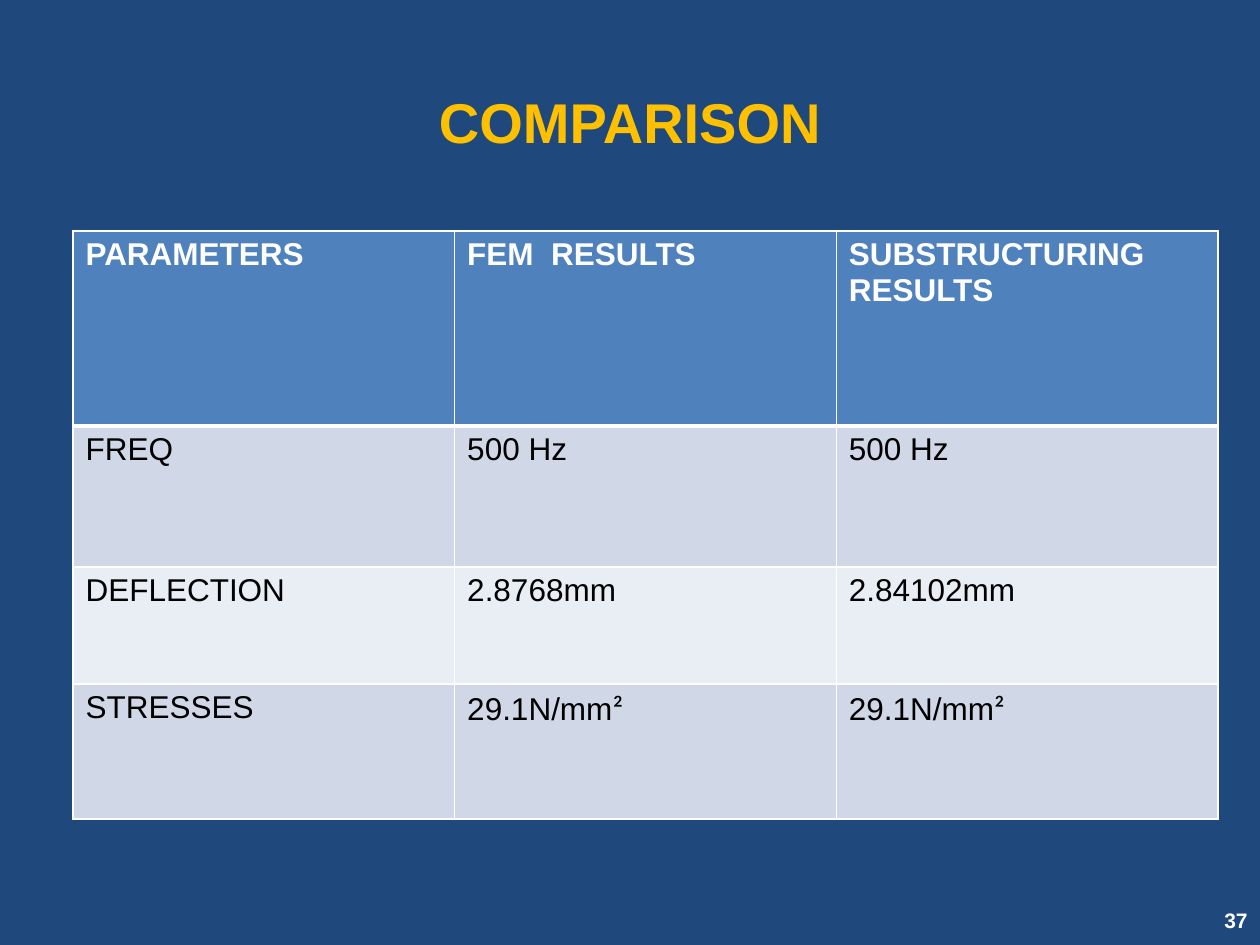
from lxml.etree import SubElement
from pptx import Presentation
from pptx.dml.color import RGBColor
from pptx.enum.text import MSO_ANCHOR, PP_ALIGN
from pptx.oxml.ns import qn
from pptx.util import Pt

EMU = 914400 / 126
HEX = {"back": "1F497D", "gold": "FFC000", "head": "4F81BD", "white": "FFFFFF",
       "black": "000000", "odd": "D0D8E8", "even": "E9EDF4"}
ROWS = [
    ["PARAMETERS", "FEM  RESULTS", "SUBSTRUCTURING RESULTS"],
    ["FREQ", "500 Hz", "500 Hz"],
    ["DEFLECTION", "2.8768mm", "2.84102mm"],
    ["STRESSES", "29.1N/mm²", "29.1N/mm²"],
]
HEIGHTS = [195, 141, 117, 135]


def px(n):
    return round(n * EMU)


def tint(name):
    return RGBColor.from_string(HEX[name])


def add_run(para, text, size, color, bold, face="Arial"):
    run = para.add_run()
    run.text = text
    font = run.font
    font.name, font.size, font.bold = face, Pt(size), bold
    font.color.rgb = tint(color)


def add_label(slide, box, text, size, color, align):
    frame = slide.shapes.add_textbox(*map(px, box)).text_frame
    frame.word_wrap = True
    frame.vertical_anchor = MSO_ANCHOR.MIDDLE
    para = frame.paragraphs[0]
    para.alignment = align
    add_run(para, text, size, color, True)


def add_edge(cell, side, width):
    line = SubElement(cell._tc.get_or_add_tcPr(), qn(f"a:ln{side}"), w=str(Pt(width)))
    fill = SubElement(line, qn("a:solidFill"))
    SubElement(fill, qn("a:srgbClr"), val=HEX["white"])


def fill_cell(cell, text, row):
    """Set edges, fill and text; a thick rule parts the head row from the body."""
    widths = {"L": 1, "R": 1, "T": 3 if row == 1 else 1, "B": 3 if row == 0 else 1}
    for side, width in widths.items():
        add_edge(cell, side, width)
    cell.fill.solid()
    head = row == 0
    cell.fill.fore_color.rgb = tint("head" if head else "odd" if row % 2 else "even")
    para = cell.text_frame.paragraphs[0]
    color = "white" if head else "black"
    base, power, _ = text.partition("²")
    add_run(para, base, 18, color, head)
    if power:
        add_run(para, power, 18, color, head, "Calibri")


def add_grid(slide, box, rows, heights):
    count = len(rows[0])
    table = slide.shapes.add_table(len(rows), count, *map(px, box)).table
    for col in table.columns:
        col.width = px(box[2] / count)
    for r, (texts, height) in enumerate(zip(rows, heights)):
        table.rows[r].height = px(height)
        for c, text in enumerate(texts):
            fill_cell(table.cell(r, c), text, r)


def main():
    deck = Presentation()
    deck.slide_width, deck.slide_height = px(1260), px(945)
    slide = deck.slides.add_slide(deck.slide_layouts[6])
    slide.background.fill.solid()
    slide.background.fill.fore_color.rgb = tint("back")
    add_label(slide, (63, 42, 1134, 158), "COMPARISON", 32, "gold", PP_ALIGN.CENTER)
    add_grid(slide, (73, 231, 1145, sum(HEIGHTS)), ROWS, HEIGHTS)
    add_label(slide, (1176, 895, 84, 50), "37", 12, "white", PP_ALIGN.RIGHT)
    deck.save("out.pptx")


if __name__ == "__main__":
    main()
